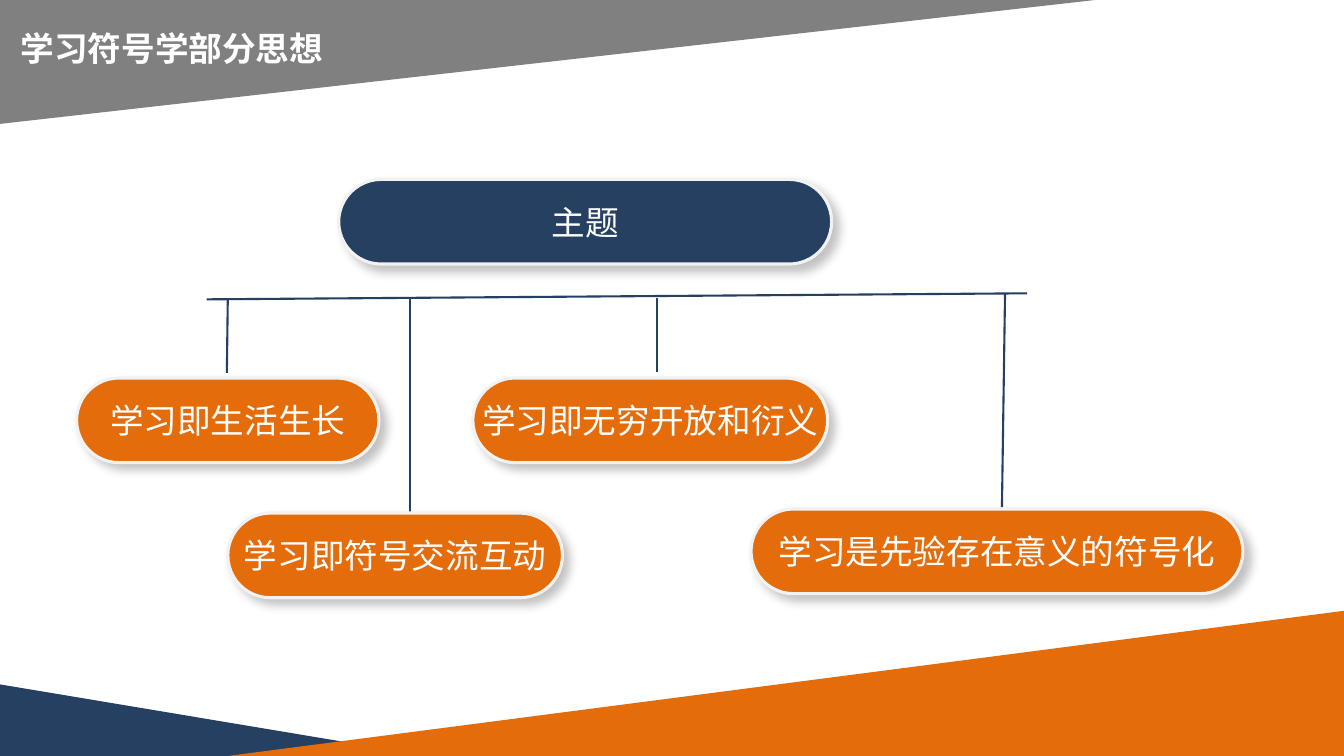
"""Build a topic tree slide on semiotic ideas about learning."""
from lxml import etree
from pptx import Presentation, util as u
from pptx.dml.color import RGBColor
from pptx.enum import shapes, text
from pptx.oxml import ns

NAVY, ORANGE, GREY = "254061", "E46C0A", "808080"
WHITE, PALE = "FFFFFF", "F2F2F2"
CJK = "Noto Sans CJK SC"

deck = Presentation()
deck.slide_width, deck.slide_height = u.Inches(13.33), u.Inches(7.5)
slide = deck.slides.add_slide(deck.slide_layouts[5])
items = slide.shapes
col, row = deck.slide_width / 100, deck.slide_height / 100


def place(*cells):
    return [int(n * size) for n, size in zip(cells, (col, row, col, row))]


def write(frame, words, font, bold):
    para = frame.paragraphs[0]
    para.alignment = text.PP_ALIGN.CENTER
    run = para.add_run()
    run.text = words
    run.font.name, run.font.size, run.font.bold = font, u.Pt(24), bold
    run.font.color.rgb = RGBColor.from_string(WHITE)
    east = etree.SubElement(run.font._element, ns.qn("a:ea"))
    east.set("typeface", CJK)


wedges = [
    (0, 90.53, 31.88, 9.47, NAVY, None),
    (16.95, 80.8, 83.05, 19.2, ORANGE, "flipH"),
    (0, 0, 81.53, 16.4, GREY, "flipV"),
]
for *cells, hue, flip in wedges:
    wedge = items.add_shape(shapes.MSO_SHAPE.RIGHT_TRIANGLE, *place(*cells))
    wedge.shadow.inherit = False
    wedge.fill.solid()
    wedge.fill.fore_color.rgb = RGBColor.from_string(hue)
    wedge.line.fill.background()
    if flip:
        wedge._element.spPr.xfrm.set(flip, "1")

lines = [
    (15.38, 39.6, 76.43, 38.8),
    (16.95, 39.6, 16.88, 49.33),
    (30.53, 39.6, 30.53, 68.93),
    (48.9, 39.47, 48.9, 49.2),
    (74.78, 38.8, 74.55, 67.07),
]
for ends in lines:
    line = items.add_connector(shapes.MSO_CONNECTOR.STRAIGHT, *place(*ends))
    line.line.color.rgb = RGBColor.from_string(NAVY)
    line.line.width = u.Pt(1.5)
    etree.SubElement(line._element.spPr, ns.qn("a:effectLst"))

pills = [
    ("主题", 25.2, 23.73, 36.68, NAVY),
    ("学习即符号交流互动", 16.95, 67.87, 24.9, ORANGE),
    ("学习即生活生长", 5.7, 50, 22.5, ORANGE),
    ("学习是先验存在意义的符号化", 55.88, 67.33, 36.6, ORANGE),
    ("学习即无穷开放和衍义", 35.18, 50, 26.4, ORANGE),
]
for words, left, top, wide, hue in pills:
    pill = items.add_shape(
        shapes.MSO_SHAPE.ROUNDED_RECTANGLE, *place(left, top, wide, 11.2))
    pill.adjustments[0] = 0.5
    pill.fill.solid()
    pill.fill.fore_color.rgb = RGBColor.from_string(hue)
    pill.line.color.rgb = RGBColor.from_string(PALE)
    pill.line.width = u.Pt(2.25)
    pill.shadow.inherit = False
    glow = etree.SubElement(
        pill._element.spPr.find(ns.qn("a:effectLst")), ns.qn("a:outerShdw"),
        blurRad=str(u.Pt(7)), dist=str(u.Pt(5.9)), dir=str(45 * 60000),
        algn="tl", rotWithShape="0")
    black = etree.SubElement(glow, ns.qn("a:srgbClr"), val="000000")
    etree.SubElement(black, ns.qn("a:alpha"), val="23000")
    frame = pill.text_frame
    frame.word_wrap = False
    frame.vertical_anchor = text.MSO_ANCHOR.MIDDLE
    write(frame, words, "Arial", False)

title = items.title
title.left, title.top, title.width, title.height = place(0, 3.73, 25.58, 7.47)
frame = title.text_frame
frame.margin_left = frame.margin_right = 0
frame.margin_top = frame.margin_bottom = 0
frame.word_wrap = True
frame.auto_size = text.MSO_AUTO_SIZE.NONE
frame.vertical_anchor = text.MSO_ANCHOR.TOP
write(frame, "学习符号学部分思想", CJK, True)
items._spTree.append(title._element)

deck.save("out.pptx")
